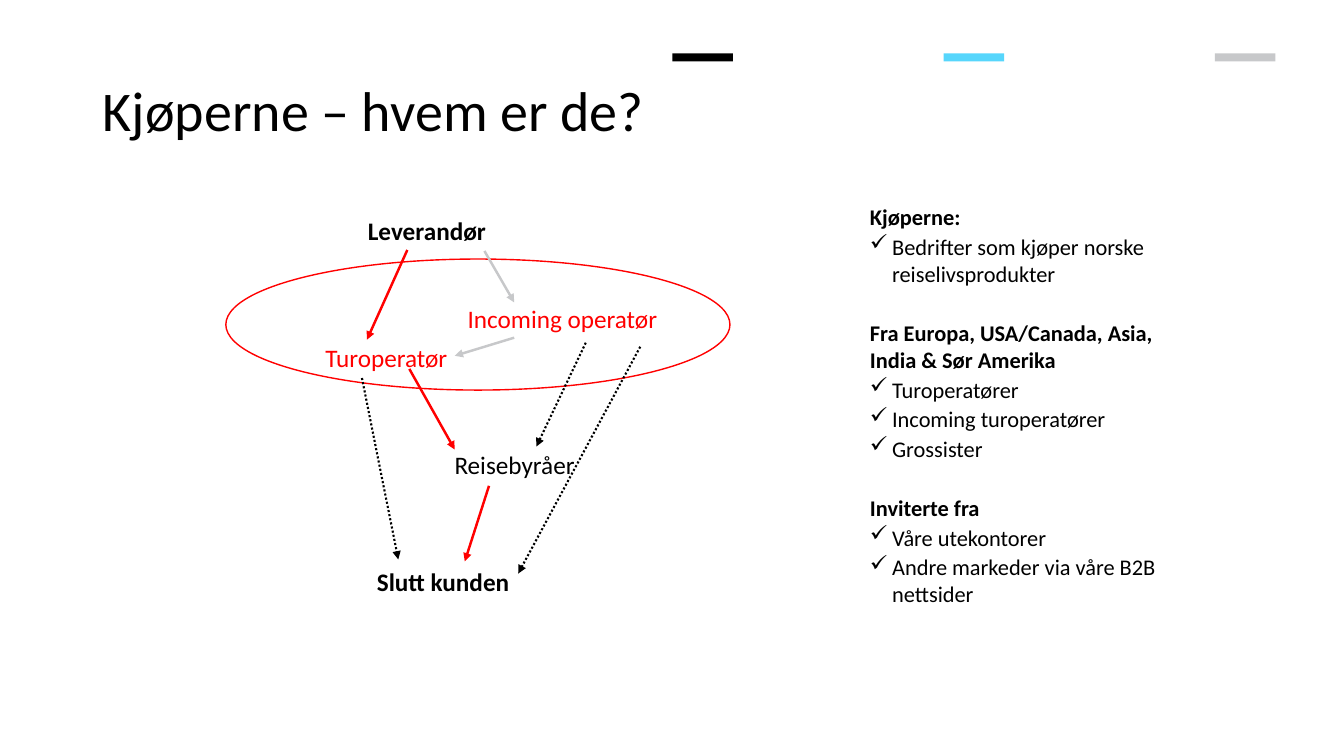
from pptx import Presentation
from pptx.dml.color import RGBColor
from pptx.enum.dml import MSO_LINE
from pptx.enum.shapes import MSO_CONNECTOR, MSO_SHAPE
from pptx.enum.text import MSO_ANCHOR, MSO_AUTO_SIZE, PP_ALIGN
from pptx.util import Pt
from lxml.etree import SubElement
from pptx.oxml.ns import qn

PX = 9144
THEME = {
    "font": "Calibri",
    "black": RGBColor(0x00, 0x00, 0x00),
    "white": RGBColor(0xFF, 0xFF, 0xFF),
    "red": RGBColor(0xFF, 0x01, 0x01),
    "pure_red": RGBColor(0xFF, 0x00, 0x00),
    "grey": RGBColor(0xC7, 0xC8, 0xCA),
    "cyan": RGBColor(0x57, 0xD6, 0xFC),
    "title": 40,
    "label": 18,
    "body": 16,
}


def px(*lengths):
    return [n * PX for n in lengths]


def add_run(p, text, size, color="black", bold=False):
    r = p.add_run()
    r.text = text
    r.font.name = THEME["font"]
    r.font.size = Pt(THEME[size])
    r.font.color.rgb = THEME[color]
    r.font.bold = bold


prs = Presentation()
prs.slide_width, prs.slide_height = px(1333, 750)
s = prs.slides.add_slide(prs.slide_layouts[5])

for i, color in enumerate(("black", "cyan", "grey")):
    bar = s.shapes.add_shape(MSO_SHAPE.RECTANGLE, *px(667 + 269 * i, 53, 60, 8))
    bar.shadow.inherit = False
    bar.fill.solid()
    bar.fill.fore_color.rgb = THEME[color]
    bar.line.fill.background()

ring = s.shapes.add_shape(MSO_SHAPE.OVAL, *px(224, 257, 500, 130))
ring.shadow.inherit = False
ring.fill.solid()
ring.fill.fore_color.rgb = THEME["white"]
ring.line.color.rgb = THEME["red"]
ring.line.width = Pt(1)

title = s.shapes.title
title.left, title.top, title.width, title.height = px(92, 40, 1150, 145)
tf = title.text_frame
tf.word_wrap = True
tf.auto_size = MSO_AUTO_SIZE.NONE
tf.vertical_anchor = MSO_ANCHOR.MIDDLE
p = tf.paragraphs[0]
p.alignment = PP_ALIGN.LEFT
p.line_spacing = 0.9
add_run(p, "Kjøperne – hvem er de?", "title")

labels = {}
for text, x, y, w, color, bold in (
    ("Leverandør", 355, 209, 251, "black", True),
    ("Incoming operatør", 454, 296, 241, "pure_red", False),
    ("Turoperatør", 313, 335, 187, "pure_red", False),
    ("Slutt kunden", 364, 557, 194, "black", True),
    ("Reisebyråer", 441, 441, 147, "black", False),
):
    box = s.shapes.add_textbox(*px(x, y, w, 40))
    tf = box.text_frame
    tf.word_wrap = True
    tf.auto_size = MSO_AUTO_SIZE.SHAPE_TO_FIT_TEXT
    add_run(tf.paragraphs[0], text, "label", color, bold)
    labels[text] = box

for x1, y1, x2, y2, color, dotted, source, target in (
    (480, 250, 510, 300, "grey", False, "Leverandør", None),
    (404, 248, 364, 337, "red", False, None, None),
    (581, 340, 532, 443, "black", True, None, None),
    (510, 335, 451, 353, "grey", False, None, None),
    (406, 366, 451, 446, "pure_red", False, None, None),
    (359, 375, 395, 555, "black", True, None, None),
    (485, 482, 462, 559, "pure_red", False, None, "Slutt kunden"),
    (635, 344, 514, 569, "black", True, None, None),
):
    arrow = s.shapes.add_connector(MSO_CONNECTOR.STRAIGHT, *px(x1, y1, x2, y2))
    if source:
        arrow.begin_connect(labels[source], 2)
    if target:
        arrow.end_connect(labels[target], 0)
    arrow.line.color.rgb = THEME[color]
    arrow.line.width = Pt(1.5 if dotted else 1.75)
    if dotted:
        arrow.line.dash_style = MSO_LINE.ROUND_DOT
    SubElement(arrow.line._get_or_add_ln(), qn("a:tailEnd"), type="triangle")
    SubElement(arrow._element.spPr, qn("a:effectLst"))

buyers = s.shapes.add_textbox(*px(853, 197, 329, 344))
tf = buyers.text_frame
tf.word_wrap = True
p = tf.paragraphs[0]
for i, (heading, items) in enumerate((
    ("Kjøperne:", ["Bedrifter som kjøper norske reiselivsprodukter"]),
    ("Fra Europa, USA/Canada, Asia, India & Sør Amerika",
     ["Turoperatører", "Incoming turoperatører", "Grossister"]),
    ("Inviterte fra",
     ["Våre utekontorer", "Andre markeder via våre B2B nettsider"]),
)):
    if i:
        p = tf.add_paragraph()
        p.space_before = Pt(23)
    add_run(p, heading, "body", bold=True)
    for item in items:
        p = tf.add_paragraph()
        p.space_before = Pt(2)
        pPr = p._p.get_or_add_pPr()
        pPr.set("marL", str(22 * PX))
        pPr.set("indent", str(-22 * PX))
        SubElement(pPr, qn("a:buChar"), char="✓")
        add_run(p, item, "body")

prs.save("out.pptx")
